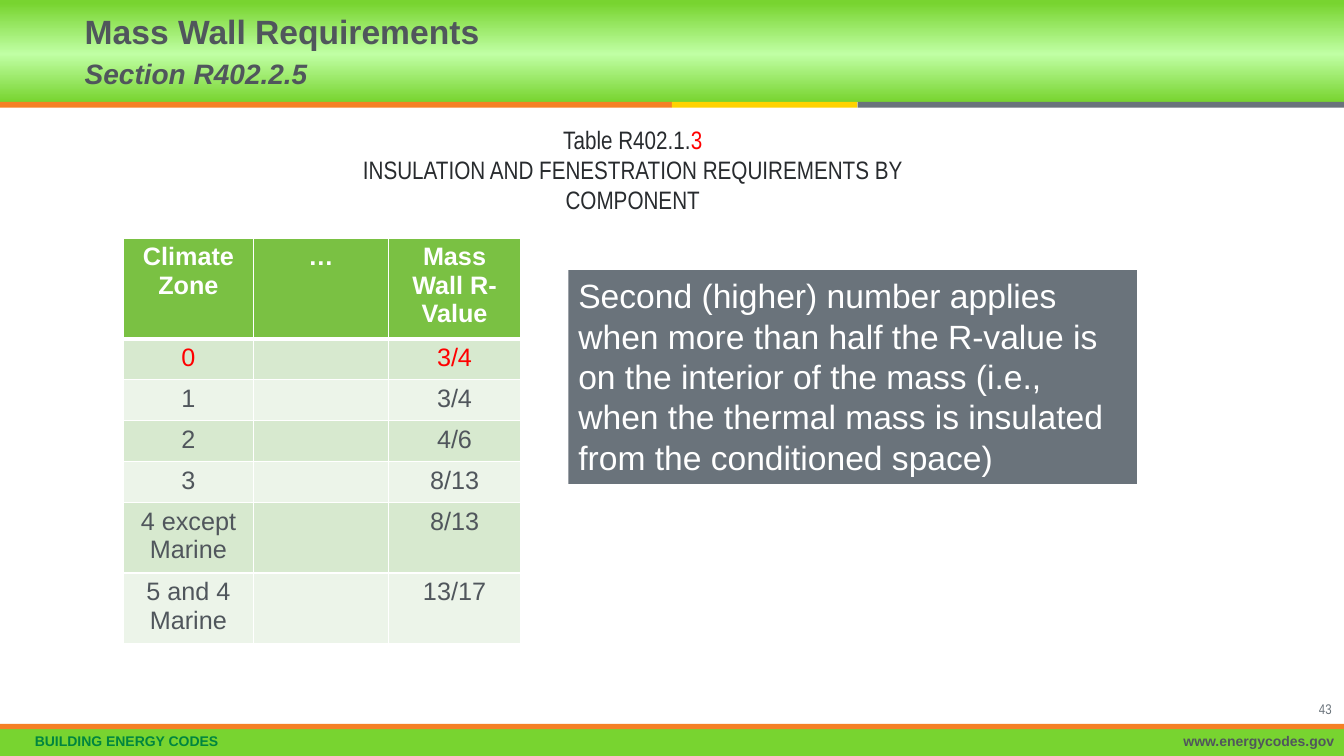
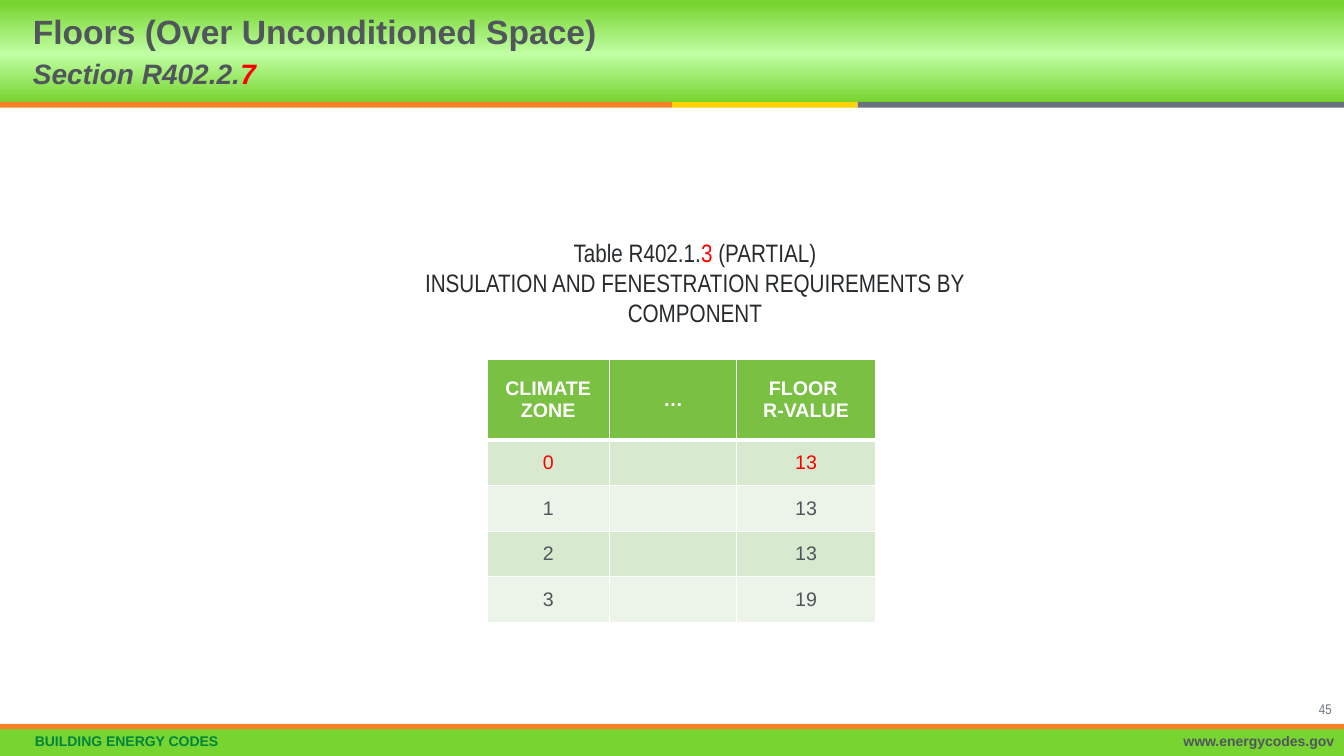
import copy

import pptx
import pptx.dml.color
import pptx.enum.shapes
import pptx.enum.text
import pptx.oxml
import pptx.oxml.ns
import pptx.util

Pt = pptx.util.Pt
ALIGN = pptx.enum.text.PP_ALIGN
ANCHOR = pptx.enum.text.MSO_ANCHOR

WIDTH, HEIGHT = 960, 540
HEADER_HEIGHT = 72.8
COLORS = {
    "white": "FFFFFF", "green": "78D430", "pale green": "C0FFA4",
    "dark green": "00853F", "orange": "F58025", "yellow": "FFD200",
    "gray": "6A737B", "text": "50565C", "ink": "282B2E", "red": "FF0000",
    "table head": "7AC143", "band 1": "D7E9CF", "band 2": "ECF4E9",
}

# left, top, width, height, colour
BANDS = [
    (0, HEADER_HEIGHT, 480, 4.2, "orange"),
    (480, HEADER_HEIGHT, 132.5, 4.2, "yellow"),
    (612.5, HEADER_HEIGHT, 347.5, 4.2, "gray"),
    (0, 520.6, WIDTH, 19.4, "green"),
    (0, 517, WIDTH, 3.8, "orange"),
]

# A line of text is a list of (words, colour) pieces.
CAPTION_NAME = [("INSULATION AND FENESTRATION REQUIREMENTS BY COMPONENT", "ink")]

SLIDES = [
    {
        "number": "43",
        "title": [[("Mass Wall Requirements", "text")],
                  [("Section R402.2.5", "text")]],
        "title_left": 53.4,
        "caption": [[("Table R402.1.", "ink"), ("3", "red")], CAPTION_NAME],
        "caption_at": (250, 85),
        "table": {
            "at": (88.2, 170), "columns": (92.8, 96.6, 94.2),
            "heights": (71.5, 29.2, 29.2, 29.2, 29.2, 50.4, 50.4),
            "size": 18, "anchor": ANCHOR.TOP, "margins": (7.2, 3.6),
            "rows": [
                ("Climate Zone", "…", "Mass Wall R-Value"),
                ("0", "", "3/4"),
                ("1", "", "3/4"),
                ("2", "", "4/6"),
                ("3", "", "8/13"),
                ("4 except Marine", "", "8/13"),
                ("5 and 4 Marine", "", "13/17"),
            ],
        },
        "callout": "Second (higher) number applies when more than half the "
                   "R-value is on the interior of the mass (i.e., when the "
                   "thermal mass is insulated from the conditioned space)",
    },
    {
        "number": "45",
        "title": [[("Floors (Over Unconditioned Space)", "text")],
                  [("Section R402.2.", "text"), ("7", "red")]],
        "title_left": 16.4,
        "caption": [[("Table R402.1.", "ink"), ("3 ", "red"), ("(PARTIAL)", "ink")],
                    CAPTION_NAME],
        "caption_at": (294.4, 165.7),
        "table": {
            "at": (347.8, 256.6), "columns": (87.6, 90.8, 99.2),
            "heights": (57.6, 32.6, 32.6, 32.6, 32.6),
            "size": 14, "anchor": ANCHOR.MIDDLE, "margins": (7.9, 4.3),
            "rows": [
                ("CLIMATE ZONE", "…", "FLOOR \vR-VALUE"),
                ("0", "", "13"),
                ("1", "", "13"),
                ("2", "", "13"),
                ("3", "", "19"),
            ],
        },
    },
]


def rgb(name):
    return pptx.dml.color.RGBColor.from_string(COLORS[name])


def style(font, size, color, face="Arial", bold=False, italic=False):
    font.name, font.size = face, Pt(size)
    font.bold, font.italic = bold, italic
    font.color.rgb = rgb(color)


def add_rect(slide, left, top, width, height, color=None):
    rect = slide.shapes.add_shape(pptx.enum.shapes.MSO_SHAPE.RECTANGLE,
                                  Pt(left), Pt(top), Pt(width), Pt(height))
    rect.shadow.inherit = False
    rect.line.fill.background()
    if color:
        rect.fill.solid()
        rect.fill.fore_color.rgb = rgb(color)
    return rect


def add_text(slide, box, lines, size, align=ALIGN.LEFT, **look):
    """Add a text box with one paragraph per line; return its frame."""
    frame = slide.shapes.add_textbox(*map(Pt, box)).text_frame
    frame.word_wrap = True
    for index, pieces in enumerate(lines):
        paragraph = frame.add_paragraph() if index else frame.paragraphs[0]
        paragraph.alignment = align
        for words, color in pieces:
            run = paragraph.add_run()
            run.text = words
            style(run.font, size, color, **look)
    return frame


def add_header_band(slide):
    """Add the header with its green, pale, green vertical gradient."""
    fill = add_rect(slide, 0, 0, WIDTH, HEADER_HEIGHT).fill
    fill.gradient()
    fill.gradient_angle = 90
    first = fill.gradient_stops[0]
    stop_list = fill.gradient_stops[0]._gs.getparent()
    stop_list.insert(1, copy.deepcopy(first._gs))
    stops = [(0, "green"), (0.47, "pale green"), (0.97, "green")]
    for stop, (position, color) in zip(fill.gradient_stops, stops):
        stop.position = position
        stop.color.rgb = rgb(color)


def add_frame(slide, number):
    """Add the bands, footer texts and slide number."""
    add_header_band(slide)
    for band in BANDS:
        add_rect(slide, *band)
    footers = [
        ((17.8, 521.3, 400, 18.7), "BUILDING ENERGY CODES", "dark green", ALIGN.LEFT),
        ((575, 521.3, 385, 18.7), "www.energycodes.gov", "text", ALIGN.RIGHT),
    ]
    for box, words, color, align in footers:
        footer = add_text(slide, box, [[(words, color)]], 10, align, bold=True)
        footer.paragraphs[0].line_spacing = 0.9
    add_text(slide, (890.6, 496.8, 67.7, 13), [[(number, "gray")]], 10,
             ALIGN.RIGHT, face="Arial Narrow")


def add_title(slide, left, lines):
    frame = add_text(slide, (left, 0, 597, HEADER_HEIGHT), lines, 24, bold=True)
    frame.vertical_anchor = ANCHOR.MIDDLE
    for paragraph in frame.paragraphs:
        paragraph.line_spacing = Pt(28)
    for run in frame.paragraphs[1].runs:
        run.font.size, run.font.italic = Pt(20), True


def set_borders(cell, widths):
    """Draw white cell borders; widths are for left, right, top, bottom."""
    properties = cell._tc.get_or_add_tcPr()
    for index, (side, width) in enumerate(zip("LRTB", widths)):
        properties.insert(index, pptx.oxml.parse_xml(
            f'<a:ln{side} {pptx.oxml.ns.nsdecls("a")} w="{Pt(width)}">'
            f'<a:solidFill><a:srgbClr val="{COLORS["white"]}"/></a:solidFill>'
            f'</a:ln{side}>'))


def add_zone_table(slide, spec_sheet):
    rows, columns = spec_sheet["rows"], spec_sheet["columns"]
    heights = spec_sheet["heights"]
    left, top = spec_sheet["at"]
    table = slide.shapes.add_table(len(rows), len(columns), Pt(left), Pt(top),
                                   Pt(sum(columns)), Pt(sum(heights))).table
    table.horz_banding = False
    for column, width in zip(table.columns, columns):
        column.width = Pt(width)
    for r, (values, height) in enumerate(zip(rows, heights)):
        table.rows[r].height = Pt(height)
        fill = "table head" if r == 0 else "band 1" if r % 2 else "band 2"
        color = {0: "white", 1: "red"}.get(r, "text")
        for c, value in enumerate(values):
            cell = table.cell(r, c)
            cell.text = value
            cell.vertical_anchor = spec_sheet["anchor"]
            side, edge = map(Pt, spec_sheet["margins"])
            cell.margin_left = cell.margin_right = side
            cell.margin_top = cell.margin_bottom = edge
            cell.fill.solid()
            cell.fill.fore_color.rgb = rgb(fill)
            set_borders(cell, (1, 1, 3 if r == 1 else 1, 3 if r == 0 else 1))
            paragraph = cell.text_frame.paragraphs[0]
            paragraph.alignment = ALIGN.CENTER
            for run in paragraph.runs:
                style(run.font, spec_sheet["size"], color, bold=r == 0)


def add_callout(slide, words):
    frame = add_rect(slide, 406, 193, 406, 152.6, "gray").text_frame
    frame.word_wrap = True
    frame.vertical_anchor = ANCHOR.TOP
    frame.text = words
    frame.paragraphs[0].alignment = ALIGN.LEFT
    style(frame.paragraphs[0].runs[0].font, 24, "white")


def main():
    deck = pptx.Presentation()
    deck.slide_width, deck.slide_height = Pt(WIDTH), Pt(HEIGHT)
    for content in SLIDES:
        slide = deck.slides.add_slide(deck.slide_layouts[6])
        add_frame(slide, content["number"])
        add_title(slide, content["title_left"], content["title"])
        add_text(slide, (*content["caption_at"], 404, 72), content["caption"], 18,
                 ALIGN.CENTER, face="Arial Narrow")
        add_zone_table(slide, content["table"])
        if "callout" in content:
            add_callout(slide, content["callout"])
    deck.save("out.pptx")


if __name__ == "__main__":
    main()
